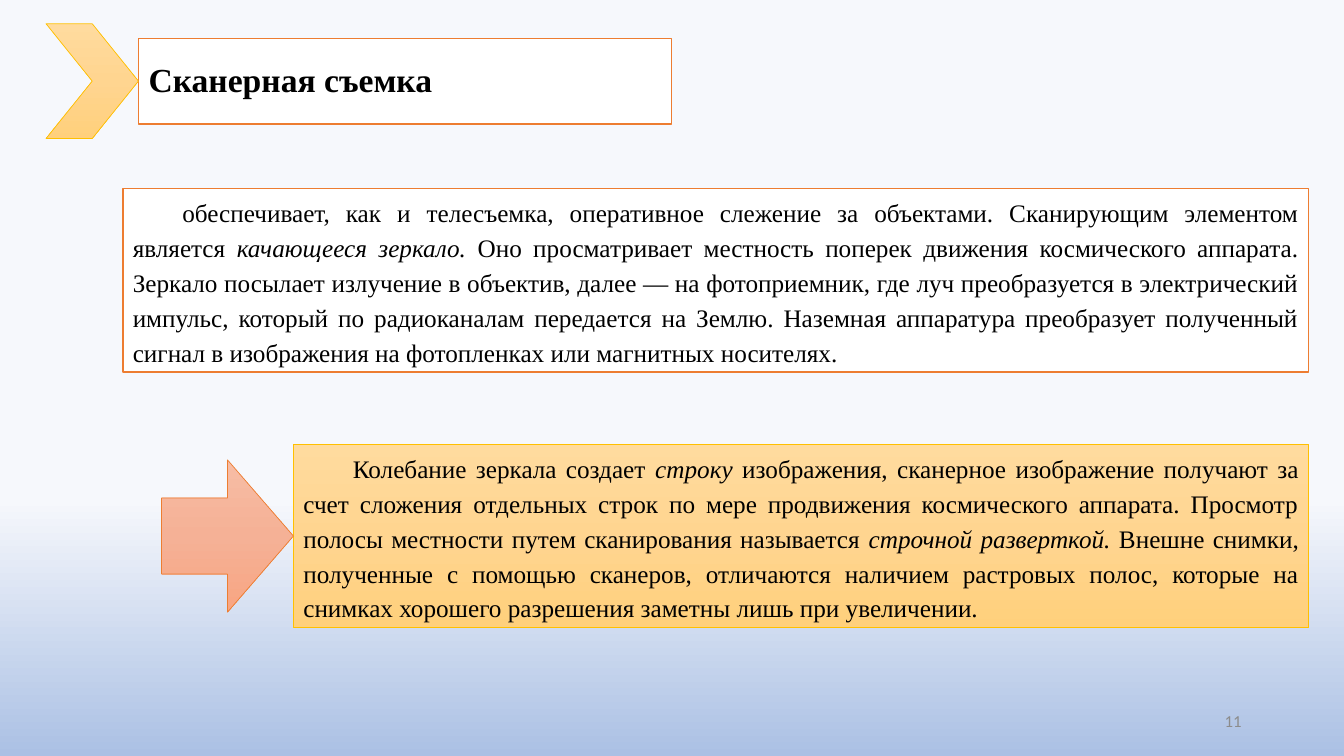
import copy

import pptx
import pptx.dml.color
import pptx.enum.shapes
import pptx.enum.text
import pptx.oxml.ns
import pptx.util

Pt = pptx.util.Pt
MSO_SHAPE = pptx.enum.shapes.MSO_SHAPE
PP_ALIGN = pptx.enum.text.PP_ALIGN
MSO_ANCHOR = pptx.enum.text.MSO_ANCHOR

# Content: text runs are (text, italic)
TITLE = "Сканерная съемка"
PAGE_NUMBER = "11"
SCANNING = [
    ("обеспечивает, как и телесъемка, оперативное слежение за объектами. "
     "Сканирующим элементом является ", False),
    ("качающееся зеркало. ", True),
    ("Оно просматривает местность поперек движения космического аппарата. "
     "Зеркало посылает излучение в объектив, далее — на фотоприемник, где луч "
     "преобразуется в электрический импульс, который по радиоканалам передается "
     "на Землю. Наземная аппаратура преобразует полученный сигнал в изображения "
     "на фотопленках или магнитных носителях.", False),
]
LINE_SWEEP = [
    ("Колебание зеркала создает ", False),
    ("строку ", True),
    ("изображения, сканерное изображение получают за счет сложения отдельных "
     "строк по мере продвижения космического аппарата. Просмотр полосы местности "
     "путем сканирования называется ", False),
    ("строчной разверткой. ", True),
    ("Внешне снимки, полученные с помощью сканеров, отличаются наличием растровых "
     "полос, которые на снимках хорошего разрешения заметны лишь при увеличении.",
     False),
]

COLORS = {
    "text": "000000", "number": "8C8C8C", "white": "FFFFFF",
    "orange": "ED7D31", "gold": "FFC000",
}
GRADIENTS = {  # (position, colour), top to bottom
    "sky": [(0.66, "F6F8FC"), (1, "ABC0E4")],
    "gold": [(0, "FFDB9E"), (0.5, "FFD590"), (1, "FFD07C")],
    "salmon": [(0, "F7BDA5"), (0.5, "F5B196"), (1, "F8A582")],
}
FONT = "Times New Roman"

# Layout: both text boxes share a right edge and a height,
# and each arrow touches the box on its right at mid-height
RIGHT_EDGE = 934.9
BOX_HEIGHT = 131.2
TITLE_BOX = (98.9, 27.3, 380.8, 61.3)
SCANNING_BOX = (87.8, 134.5, RIGHT_EDGE - 87.8, BOX_HEIGHT)
SWEEP_BOX = (209.6, 317.3, RIGHT_EDGE - 209.6, BOX_HEIGHT)
CHEVRON_SIZE = (66, 82)
ARROW_SIZE = (94.2, 108.8)
NUMBER_BOX = (678, 500.5, 216, 28.75)


def rgb(value):
    return pptx.dml.color.RGBColor.from_string(value)


def set_gradient(fill, element, stops):
    fill.gradient()
    fill.gradient_angle = 270
    stop_list = element.find(".//" + pptx.oxml.ns.qn("a:gsLst"))
    for _ in range(len(stops) - len(stop_list)):
        stop_list.append(copy.deepcopy(stop_list[0]))
    for stop, (position, color) in zip(fill.gradient_stops, stops):
        stop.position = position
        stop.color.rgb = rgb(color)


def set_solid(shape, fill_color, line_color, line_width):
    shape.fill.solid()
    shape.fill.fore_color.rgb = rgb(fill_color)
    set_line(shape, line_color, line_width)


def set_line(shape, color, width):
    shape.line.color.rgb = rgb(color)
    shape.line.width = Pt(width)


def set_font(paragraph, name, size, color):
    paragraph.font.name = name
    paragraph.font.size = Pt(size)
    paragraph.font.color.rgb = rgb(color)


def add_shape(slide, kind, box):
    shape = slide.shapes.add_shape(kind, *map(Pt, box))
    shape.shadow.inherit = False
    return shape


def add_arrow(slide, kind, size, target, gradient, line_color):
    left, top, _, height = target
    box = (left - size[0], top + (height - size[1]) / 2, *size)
    arrow = add_shape(slide, kind, box)
    set_gradient(arrow.fill, arrow.element, gradient)
    set_line(arrow, line_color, 0.5)


def add_text_panel(slide, box, runs):
    panel = add_shape(slide, MSO_SHAPE.RECTANGLE, box)
    frame = panel.text_frame
    frame.word_wrap = True
    frame.auto_size = pptx.enum.text.MSO_AUTO_SIZE.SHAPE_TO_FIT_TEXT
    frame.vertical_anchor = MSO_ANCHOR.TOP
    paragraph = frame.paragraphs[0]
    paragraph.alignment = PP_ALIGN.JUSTIFY
    paragraph.line_spacing = 1.15
    paragraph.space_after = Pt(10)
    properties = paragraph._p.get_or_add_pPr()
    properties.set("marL", "0")
    properties.set("indent", str(Pt(35.4)))
    set_font(paragraph, FONT, 18, COLORS["text"])
    for text, italic in runs:
        run = paragraph.add_run()
        run.text = text
        run.font.italic = italic
    return panel


def main():
    presentation = pptx.Presentation()
    presentation.slide_width = Pt(960)
    presentation.slide_height = Pt(540)
    slide = presentation.slides.add_slide(presentation.slide_layouts[5])
    set_gradient(slide.background.fill, slide.element, GRADIENTS["sky"])

    # Title with its chevron
    title = slide.shapes.title
    title.left, title.top, title.width, title.height = map(Pt, TITLE_BOX)
    set_solid(title, COLORS["white"], COLORS["orange"], 1)
    title.text_frame.text = TITLE
    title.text_frame.vertical_anchor = MSO_ANCHOR.MIDDLE
    heading = title.text_frame.paragraphs[0]
    heading.alignment = PP_ALIGN.LEFT
    heading.line_spacing = 0.9
    set_font(heading, FONT, 24, COLORS["text"])
    heading.font.bold = True
    add_arrow(slide, MSO_SHAPE.CHEVRON, CHEVRON_SIZE, TITLE_BOX,
              GRADIENTS["gold"], COLORS["gold"])

    # Text panels, the second one with its arrow
    scanning = add_text_panel(slide, SCANNING_BOX, SCANNING)
    set_solid(scanning, COLORS["white"], COLORS["orange"], 1)
    sweep = add_text_panel(slide, SWEEP_BOX, LINE_SWEEP)
    set_gradient(sweep.fill, sweep.element, GRADIENTS["gold"])
    set_line(sweep, COLORS["gold"], 0.5)
    add_arrow(slide, MSO_SHAPE.RIGHT_ARROW, ARROW_SIZE, SWEEP_BOX,
              GRADIENTS["salmon"], COLORS["orange"])

    # Page number
    number = slide.shapes.add_textbox(*map(Pt, NUMBER_BOX))
    number.text_frame.word_wrap = True
    number.text_frame.vertical_anchor = MSO_ANCHOR.MIDDLE
    number.text_frame.text = PAGE_NUMBER
    paragraph = number.text_frame.paragraphs[0]
    paragraph.alignment = PP_ALIGN.RIGHT
    set_font(paragraph, "Calibri", 12, COLORS["number"])

    presentation.save("out.pptx")


if __name__ == "__main__":
    main()
